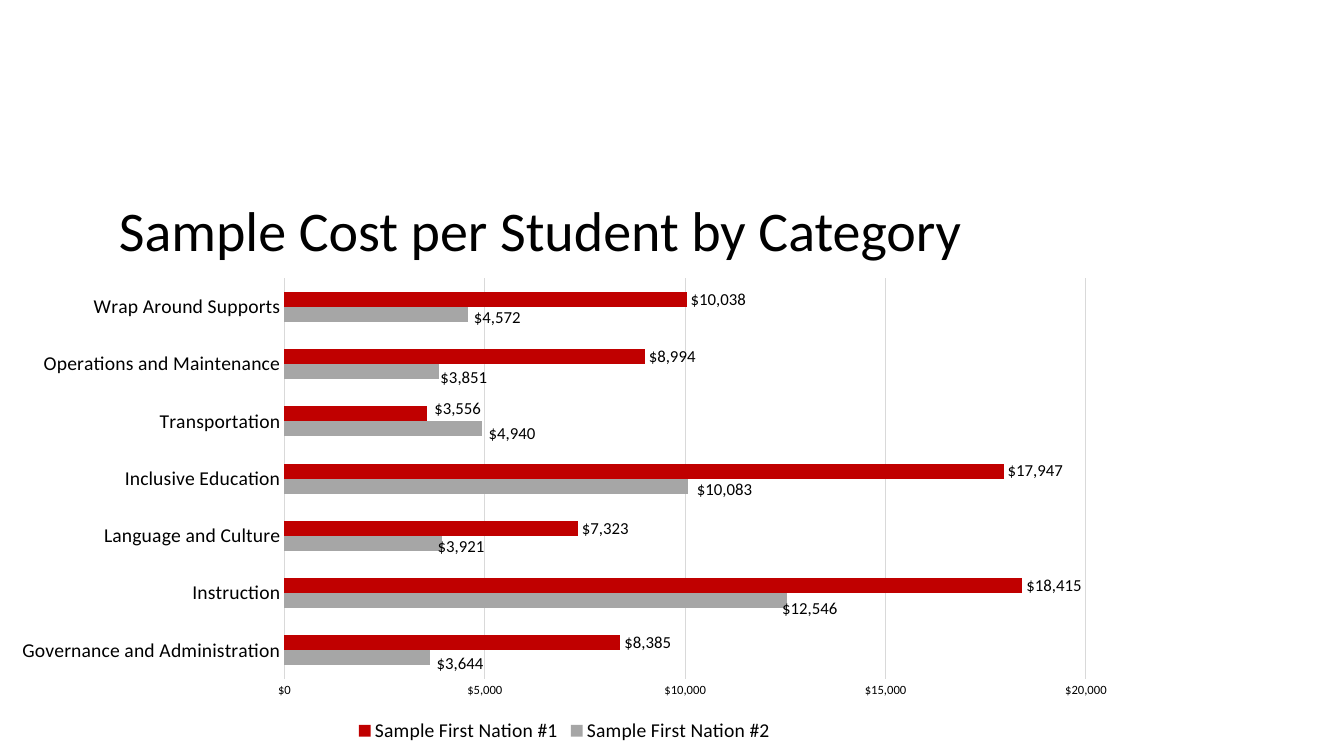
import pptx
import pptx.chart.data
import pptx.dml.color
import pptx.enum.chart
import pptx.enum.text
import pptx.util
from lxml import etree
from pptx.oxml.ns import qn

WIDTH, HEIGHT = 13.33, 7.5
FONT = "Calibri"
MONEY = '"$"#,##0'
COLORS = {"text": "000000", "grid": "D9D9D9", "nation1": "C00000", "nation2": "A6A6A6"}

CATEGORIES = [
    "Governance and Administration",
    "Instruction",
    "Language and Culture",
    "Inclusive Education",
    "Transportation",
    "Operations and Maintenance",
    "Wrap Around Supports",
]
SERIES = [
    ("Sample First Nation #2", "nation2", (3644, 12546, 3921, 10083, 4940, 3851, 4572)),
    ("Sample First Nation #1", "nation1", (8385, 18415, 7323, 17947, 3556, 8994, 10038)),
]
LABEL_SHIFTS = [
    {
        0: (0.002, 0.013),
        1: (-0.008, 0.017),
        2: (-0.007, 0.008),
        3: (0.004, 0.008),
        4: (0.002, 0.01),
        5: (-0.002, 0.013),
        6: (0.002, 0.008),
    },
    {4: (0.003, -0.01)},
]


def rgb(name):
    return pptx.dml.color.RGBColor.from_string(COLORS[name])


def box(left, top, width, height):
    shares = ((left, WIDTH), (top, HEIGHT), (width, WIDTH), (height, HEIGHT))
    return [pptx.util.Inches(share * size) for share, size in shares]


def style_font(font, size):
    font.size = pptx.util.Pt(size)
    font.name = FONT
    font.color.rgb = rgb("text")


def style_line(line):
    line.color.rgb = rgb("grid")
    line.width = pptx.util.Pt(0.75)


def add_title(s, text):
    sp = s.shapes.title
    sp.left, sp.top, sp.width, sp.height = box(0.081, 0.252, 0.728, 0.103)
    tf = sp.text_frame
    tf.word_wrap = True
    tf.auto_size = pptx.enum.text.MSO_AUTO_SIZE.NONE
    tf.vertical_anchor = pptx.enum.text.MSO_ANCHOR.MIDDLE
    p = tf.paragraphs[0]
    p.alignment = pptx.enum.text.PP_ALIGN.LEFT
    r = p.add_run()
    r.text = text
    style_font(r.font, 40)


def make_layout(**values):
    layout = etree.Element(qn("c:layout"))
    manual = etree.SubElement(layout, qn("c:manualLayout"))
    for tag, value in values.items():
        etree.SubElement(manual, qn(f"c:{tag}")).set("val", str(value))
    return layout


def place_plot(chart):
    area = chart.plots[0]._element.getparent()
    for old in area.findall(qn("c:layout")):
        area.remove(old)
    area.insert(0, make_layout(layoutTarget="inner", xMode="edge", yMode="edge",
                               x=0.252, y=0.019, w=0.71, h=0.839))


def shift_label(series, index, dx, dy):
    label = series.points[index].data_label
    style_font(label.font, 12)
    label.position = pptx.enum.chart.XL_LABEL_POSITION.OUTSIDE_END
    idx = series._element.xpath(f"c:dLbls/c:dLbl/c:idx[@val='{index}']")[0]
    number = etree.Element(qn("c:numFmt"), formatCode=MONEY, sourceLinked="0")
    idx.addnext(number)
    idx.addnext(make_layout(x=dx, y=dy))


def style_series(series, color, shifts):
    series.format.fill.solid()
    series.format.fill.fore_color.rgb = rgb(color)
    series.invert_if_negative = False
    labels = series.data_labels
    labels.show_value = True
    labels.number_format = MONEY
    labels.number_format_is_linked = False
    labels.position = pptx.enum.chart.XL_LABEL_POSITION.OUTSIDE_END
    style_font(labels.font, 12)
    for index, (dx, dy) in shifts.items():
        shift_label(series, index, dx, dy)


def style_axes(chart):
    for axis, size in ((chart.category_axis, 14), (chart.value_axis, 9)):
        axis.major_tick_mark = pptx.enum.chart.XL_TICK_MARK.NONE
        axis.minor_tick_mark = pptx.enum.chart.XL_TICK_MARK.NONE
        style_font(axis.tick_labels.font, size)
    style_line(chart.category_axis.format.line)
    values = chart.value_axis
    values.minimum_scale, values.maximum_scale, values.major_unit = 0, 20000, 5000
    values.format.line.fill.background()
    values.has_major_gridlines = True
    style_line(values.major_gridlines.format.line)
    values.tick_labels.number_format = MONEY
    values.tick_labels.number_format_is_linked = False


def add_cost_chart(s):
    data = pptx.chart.data.CategoryChartData(number_format=MONEY)
    data.categories = CATEGORIES
    for name, _, costs in SERIES:
        data.add_series(name, costs)
    chart = s.shapes.add_chart(pptx.enum.chart.XL_CHART_TYPE.BAR_CLUSTERED,
                               *box(0, 0.356, 0.84, 0.632), data).chart
    style_font(chart.font, 10)
    chart.has_title = False
    chart.has_legend = True
    chart.legend.position = pptx.enum.chart.XL_LEGEND_POSITION.BOTTOM
    chart.legend.include_in_layout = False
    style_font(chart.legend.font, 14)
    plot = chart.plots[0]
    plot.gap_width = 182
    plot.vary_by_categories = False
    for series, (_, color, _), shifts in zip(plot.series, SERIES, LABEL_SHIFTS):
        style_series(series, color, shifts)
    style_axes(chart)
    place_plot(chart)


def main():
    prs = pptx.Presentation()
    prs.slide_width = pptx.util.Inches(WIDTH)
    prs.slide_height = pptx.util.Inches(HEIGHT)
    s = prs.slides.add_slide(prs.slide_layouts.get_by_name("Title Only"))
    add_cost_chart(s)
    add_title(s, "Sample Cost per Student by Category")
    prs.save("out.pptx")


if __name__ == "__main__":
    main()
